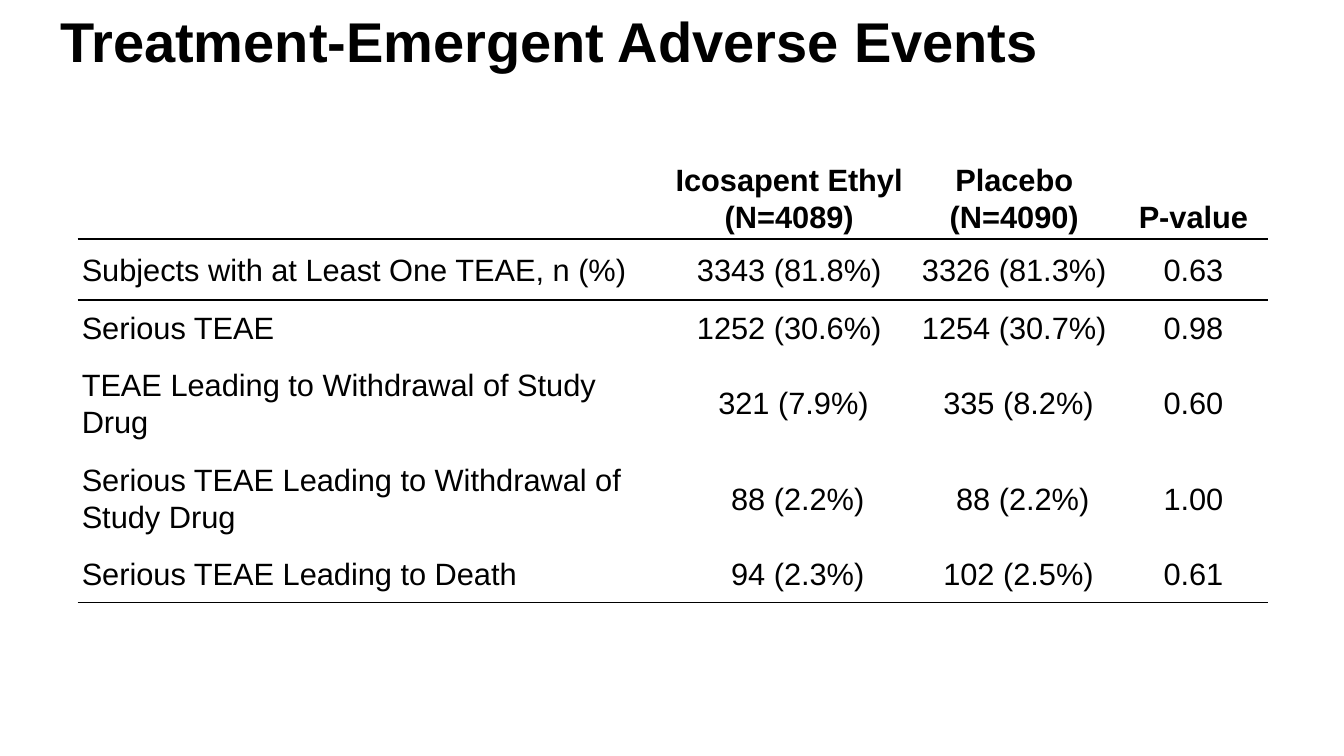
from pptx import Presentation
from pptx.util import Pt
from pptx.dml.color import RGBColor
from pptx.enum.text import PP_ALIGN as Align, MSO_ANCHOR as Anchor
from pptx.oxml import parse_xml
from pptx.oxml.ns import nsdecls

TITLE = "Treatment-Emergent Adverse Events"
HEAD = ["", "Icosapent Ethyl\n(N=4089)", "Placebo\n(N=4090)", "P-value"]
ROWS = [
    ("Subjects with at Least One TEAE, n (%)", "3343 (81.8%)", "3326 (81.3%)", "0.63"),
    ("Serious TEAE", "1252 (30.6%)", "1254 (30.7%)", "0.98"),
    ("TEAE Leading to Withdrawal of Study Drug", "321 (7.9%)", "335 (8.2%)", "0.60"),
    ("Serious TEAE Leading to Withdrawal of Study Drug", "88 (2.2%)", "88 (2.2%)", "1.00"),
    ("Serious TEAE Leading to Death", "94 (2.3%)", "102 (2.5%)", "0.61"),
]
WIDTHS = [422.5, 171.5, 150, 106]
HEIGHTS = [61.2, 43.2, 36.7, 40.3, 50.4, 40.3]
LEFT, TOP = 55.5, 108.7
INSET, TALL = 2.9, 5.75
DIGITS, SPACE = 4, 6.1
BLACK = RGBColor(0, 0, 0)
WHITE = RGBColor(255, 255, 255)
PLAIN = "{2D5ABB26-0587-4C30-8999-92F81FD0307C}"


def write(par, text, size, bold):
    for i, line in enumerate(text.split("\n")):
        if i:
            par.add_line_break()
        run = par.add_run()
        run.text = line
        font = run.font
        font.name, font.size, font.bold = "Arial", Pt(size), bold
        font.color.rgb = BLACK


def rule(cell, side, width):
    line = parse_xml(
        f'<a:{side} {nsdecls("a")} w="{Pt(width)}"><a:solidFill>'
        f'<a:srgbClr val="{BLACK}"/></a:solidFill></a:{side}>')
    cell._tc.get_or_add_tcPr().insert(0, line)


def fill_cell(cell, row, col, text):
    cell.fill.solid()
    cell.fill.fore_color.rgb = WHITE
    cell.vertical_anchor = Anchor.MIDDLE if row else Anchor.BOTTOM
    edge = TALL if row > 1 and col == 0 else INSET
    cell.margin_top = cell.margin_bottom = Pt(edge)
    counts = row > 0 and col in (1, 2)
    pad = SPACE * (DIGITS - text.find(" ")) if counts else 0
    cell.margin_left, cell.margin_right = Pt(INSET + pad), Pt(INSET)
    par = cell.text_frame.paragraphs[0]
    par.alignment = Align.CENTER if col else Align.LEFT
    par.line_spacing = 1.07
    par.space_after = Pt(3)
    if text:
        write(par, text, 22, row == 0)
    if row == 0:
        rule(cell, "lnB", 1.5)
    elif row == 1:
        rule(cell, "lnT", 1.5)
    elif row == len(ROWS):
        rule(cell, "lnB", 1)


def main():
    deck = Presentation()
    deck.slide_width, deck.slide_height = Pt(960), Pt(540)
    slide = deck.slides.add_slide(deck.slide_layouts[6])

    box = slide.shapes.add_textbox(Pt(36), Pt(-0.7), Pt(828), Pt(64.8))
    frame = box.text_frame
    frame.word_wrap = True
    frame.vertical_anchor = Anchor.MIDDLE
    frame.paragraphs[0].line_spacing = 0.9
    write(frame.paragraphs[0], TITLE, 40, True)

    grid = [HEAD, *ROWS]
    table = slide.shapes.add_table(
        len(grid), len(HEAD), Pt(LEFT), Pt(TOP),
        Pt(sum(WIDTHS)), Pt(sum(HEIGHTS))).table
    table.first_row = table.horz_banding = False
    table._tbl.tblPr[0].text = PLAIN
    for col, width in zip(table.columns, WIDTHS):
        col.width = Pt(width)
    for r, (texts, height) in enumerate(zip(grid, HEIGHTS)):
        table.rows[r].height = Pt(height)
        for c, text in enumerate(texts):
            fill_cell(table.cell(r, c), r, c, text)

    deck.save("out.pptx")


if __name__ == "__main__":
    main()
